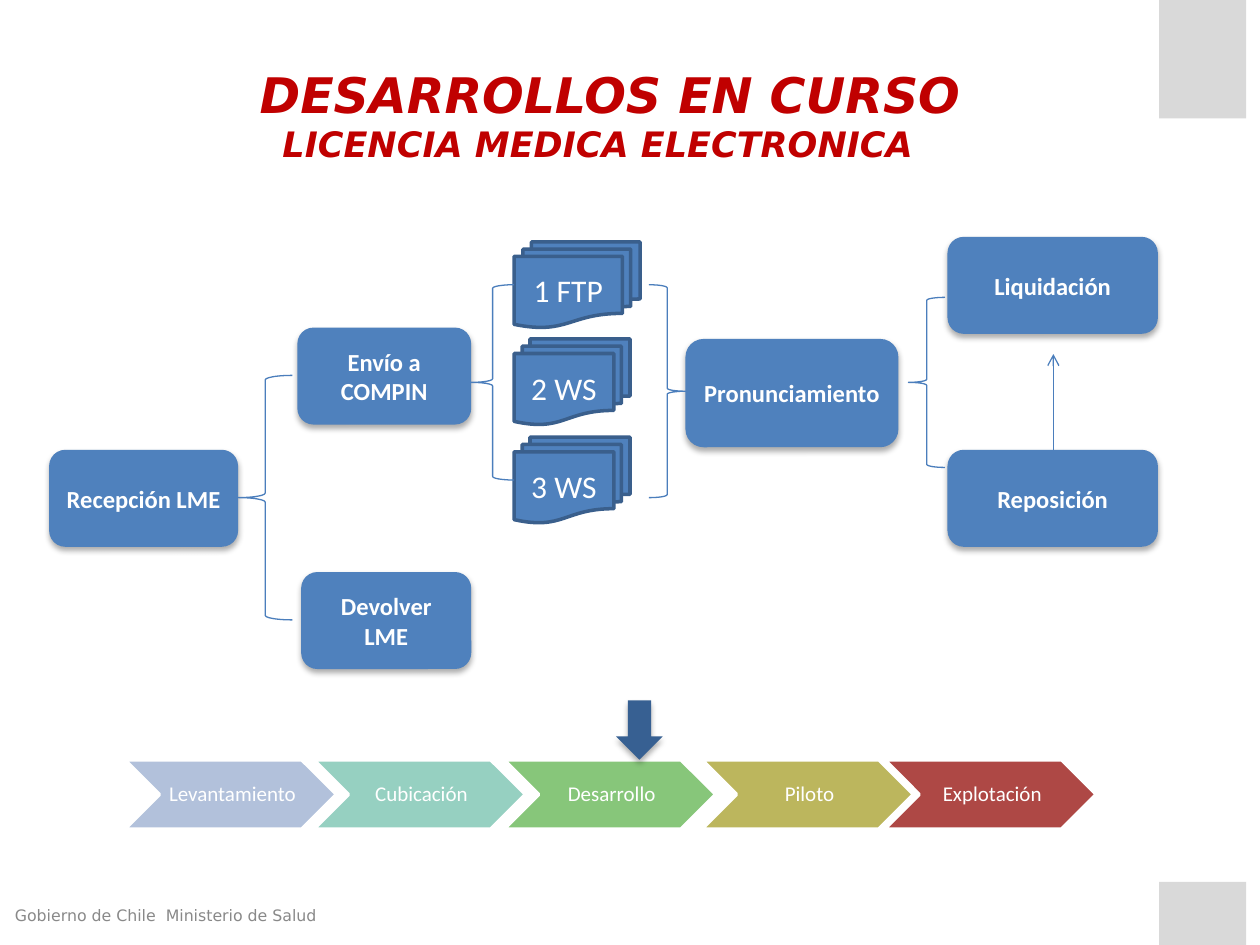
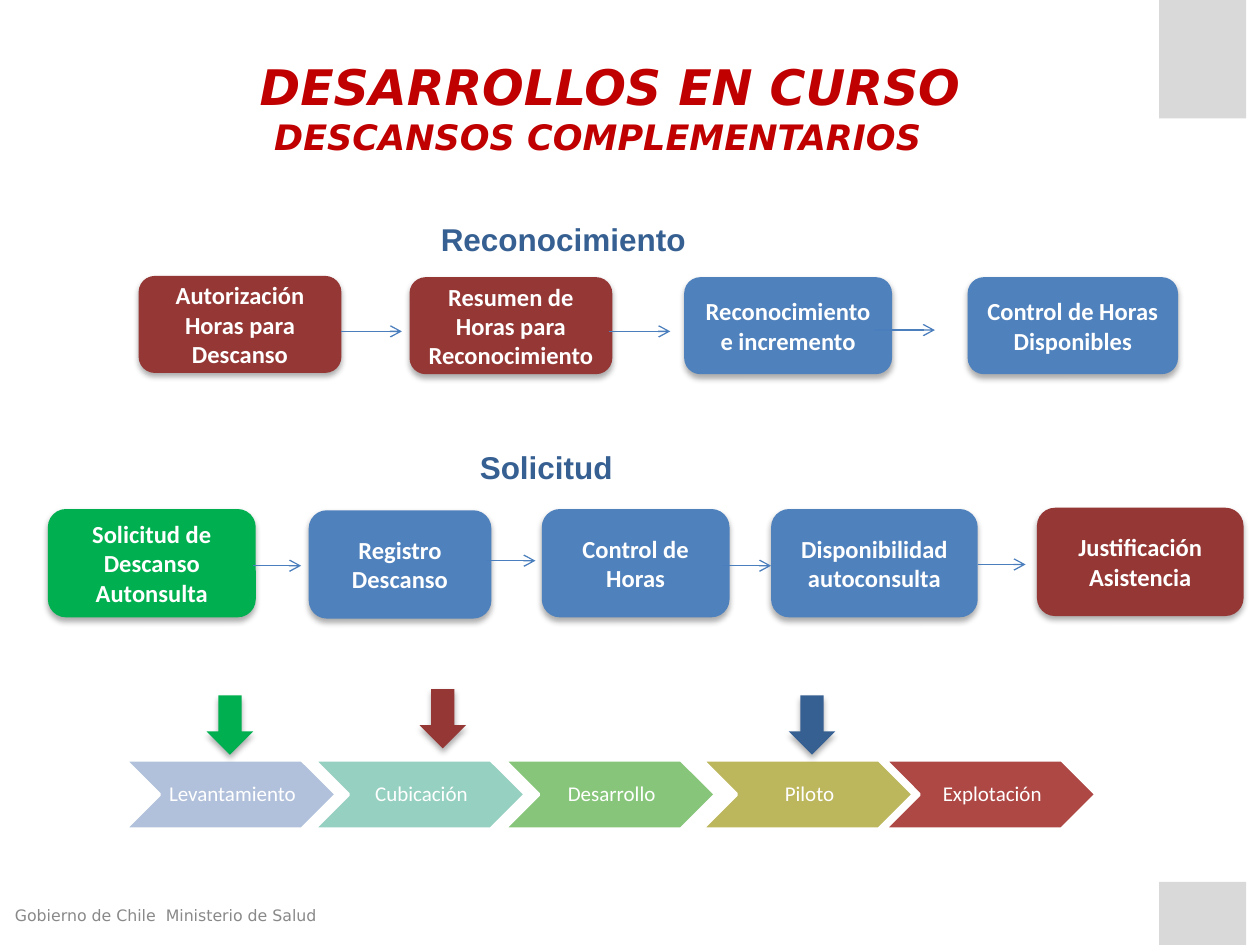
from dataclasses import dataclass

from pptx import Presentation
from pptx.dml.color import RGBColor
from pptx.enum.shapes import MSO_CONNECTOR, MSO_SHAPE
from pptx.enum.text import MSO_ANCHOR, PP_ALIGN
from pptx.oxml.ns import qn
from pptx.oxml.xmlchemy import OxmlElement
from pptx.shapes.autoshape import Shape
from pptx.slide import Slide
from pptx.text.text import TextFrame
from pptx.util import Emu, Pt

RECTANGLE = MSO_SHAPE.RECTANGLE
ROUNDED = MSO_SHAPE.ROUNDED_RECTANGLE
CHEVRON = MSO_SHAPE.CHEVRON
DOWN_ARROW = MSO_SHAPE.DOWN_ARROW
DOCUMENTS = MSO_SHAPE.FLOWCHART_MULTIDOCUMENT
LEFT_BRACE = MSO_SHAPE.LEFT_BRACE
RIGHT_BRACE = MSO_SHAPE.RIGHT_BRACE
STRAIGHT = MSO_CONNECTOR.STRAIGHT
LEFT = PP_ALIGN.LEFT
CENTER = PP_ALIGN.CENTER
TOP = MSO_ANCHOR.TOP
MIDDLE = MSO_ANCHOR.MIDDLE

EMU_PER_PX = 9144  # 100 px to the inch


@dataclass(frozen=True)
class Theme:
    title_red: str = "C00000"
    footer_gray: str = "898989"
    corner_gray: str = "D9D9D9"
    white: str = "FFFFFF"
    blue: str = "4F81BD"
    dark_blue: str = "376092"
    outline_blue: str = "3A5F8C"
    line_blue: str = "4B7EBC"
    maroon: str = "953735"
    green: str = "00B050"
    levantamiento: str = "B2C1DB"
    cubicacion: str = "96D0C1"
    desarrollo: str = "87C67A"
    piloto: str = "BCB65D"
    explotacion: str = "AE4845"
    shadow: str = "000000"
    title_font: str = "DejaVu Sans"
    body_font: str = "Calibri"
    heading_font: str = "Arial"
    title_size: int = 28
    subtitle_size: int = 20
    heading_size: int = 18
    document_size: int = 18
    box_size: int = 14
    phase_size: int = 12
    footer_size: int = 9
    thin: float = 0.75
    thick: float = 2


THEME = Theme()


@dataclass(frozen=True)
class Area:
    left: int
    top: int
    width: int
    height: int

    def emu(self) -> tuple[Emu, ...]:
        return tuple(px(n) for n in (self.left, self.top, self.width, self.height))


@dataclass(frozen=True)
class TextStyle:
    font: str
    size: int
    color: str
    bold: bool = False
    italic: bool = False


TITLE = TextStyle(THEME.title_font, THEME.title_size, THEME.title_red, True, True)
SUBTITLE = TextStyle(THEME.title_font, THEME.subtitle_size, THEME.title_red, True, True)
HEADING = TextStyle(THEME.heading_font, THEME.heading_size, THEME.dark_blue, True)
FOOTER = TextStyle(THEME.title_font, THEME.footer_size, THEME.footer_gray)
BOX_TEXT = TextStyle(THEME.body_font, THEME.box_size, THEME.white, True)
DOCUMENT_TEXT = TextStyle(THEME.body_font, THEME.document_size, THEME.white)
PHASE_TEXT = TextStyle(THEME.body_font, THEME.phase_size, THEME.white)


@dataclass(frozen=True)
class Step:
    text: str
    area: Area
    fill: str = THEME.blue


@dataclass(frozen=True)
class Arrow:
    start: tuple[int, int]
    end: tuple[int, int]


@dataclass(frozen=True)
class Phase:
    text: str
    left: int
    fill: str


CORNER_BARS = (Area(920, 0, 69, 94), Area(920, 700, 69, 50))

PHASES = (
    Phase("Levantamiento", 99, THEME.levantamiento),
    Phase("Cubicación", 249, THEME.cubicacion),
    Phase("Desarrollo", 400, THEME.desarrollo),
    Phase("Piloto", 557, THEME.piloto),
    Phase("Explotación", 702, THEME.explotacion),
)

LICENSE_STEPS = (
    Step("Recepción LME", Area(39, 357, 150, 77)),
    Step("Envío a COMPIN", Area(236, 260, 138, 77)),
    Step("Pronunciamiento", Area(544, 269, 169, 86)),
    Step("Liquidación", Area(752, 188, 167, 77)),
    Step("Devolver LME", Area(239, 454, 135, 77)),
    Step("Reposición", Area(752, 357, 167, 77)),
)
DOCUMENT_STACKS = (
    Step("1 FTP", Area(408, 192, 100, 68)),
    Step("2 WS", Area(408, 269, 92, 68)),
    Step("3 WS", Area(408, 347, 92, 68)),
)
BRACES = (
    (LEFT_BRACE, Area(189, 298, 43, 194)),
    (LEFT_BRACE, Area(374, 226, 34, 155)),
    (RIGHT_BRACE, Area(515, 226, 29, 169)),
    (LEFT_BRACE, Area(721, 236, 29, 135)),
)

REST_STEPS = (
    Step("Autorización Horas para Descanso", Area(110, 219, 161, 77), THEME.maroon),
    Step("Resumen de Horas para Reconocimiento", Area(325, 220, 161, 77), THEME.maroon),
    Step("Reconocimiento e incremento", Area(543, 220, 165, 77)),
    Step("Control de Horas Disponibles", Area(768, 220, 167, 77)),
    Step("Solicitud de Descanso Autonsulta", Area(38, 404, 165, 86), THEME.green),
    Step("Registro Descanso", Area(245, 405, 145, 86)),
    Step("Control de Horas", Area(430, 404, 149, 86)),
    Step("Disponibilidad autoconsulta", Area(612, 404, 164, 86)),
    Step("Justificación Asistencia", Area(823, 403, 164, 86), THEME.maroon),
)
REST_ARROWS = (
    Arrow((271, 263), (319, 263)),
    Arrow((483, 263), (532, 263)),
    Arrow((694, 262), (742, 262)),
    Arrow((201, 449), (239, 449)),
    Arrow((386, 445), (425, 445)),
    Arrow((574, 449), (612, 449)),
    Arrow((776, 448), (814, 448)),
)


def px(length: int) -> Emu:
    return Emu(length * EMU_PER_PX)


def rgb(color: str) -> RGBColor:
    return RGBColor.from_string(color)


def write(frame: TextFrame, text: str, style: TextStyle, align: PP_ALIGN = CENTER,
          anchor: MSO_ANCHOR = MIDDLE, first: bool = True):
    """Write one styled paragraph and return it."""
    frame.word_wrap = True
    frame.vertical_anchor = anchor
    para = frame.paragraphs[0] if first else frame.add_paragraph()
    para.alignment = align
    span = para.add_run()
    span.text = text
    font = span.font
    font.name, font.size = style.font, Pt(style.size)
    font.bold, font.italic = style.bold, style.italic
    font.color.rgb = rgb(style.color)
    return para


def add_shadow(shape: Shape) -> None:
    outer = OxmlElement("a:outerShdw")
    outer.set("blurRad", str(Pt(3.5)))
    outer.set("dist", str(Pt(2.2)))
    outer.set("dir", "5400000")
    outer.set("rotWithShape", "0")
    color = OxmlElement("a:srgbClr")
    color.set("val", THEME.shadow)
    alpha = OxmlElement("a:alpha")
    alpha.set("val", "32000")
    color.append(alpha)
    outer.append(color)
    shape.element.spPr.find(qn("a:effectLst")).append(outer)


def add_figure(page: Slide, kind: MSO_SHAPE, area: Area, fill: str | None = None,
               line: str | None = None, weight: float = THEME.thick,
               shadow: bool = False) -> Shape:
    shape = page.shapes.add_shape(kind, *area.emu())
    shape.shadow.inherit = False
    if fill:
        shape.fill.solid()
        shape.fill.fore_color.rgb = rgb(fill)
    else:
        shape.fill.background()
    if line:
        shape.line.color.rgb = rgb(line)
        shape.line.width = Pt(weight)
    else:
        shape.line.fill.background()
    if shadow:
        add_shadow(shape)
    return shape


def add_text(page: Slide, area: Area, text: str, style: TextStyle) -> None:
    box = page.shapes.add_textbox(*area.emu())
    write(box.text_frame, text, style, LEFT, TOP)


def add_title(page: Slide, top: int, subtitle: str) -> None:
    frame = page.shapes.add_textbox(*Area(28, top, 893, 88).emu()).text_frame
    title = write(frame, "DESARROLLOS EN CURSO", TITLE, anchor=TOP)
    title._p.get_or_add_pPr().set("marL", str(px(19)))
    write(frame, subtitle, SUBTITLE, anchor=TOP, first=False)


def add_step(page: Slide, step: Step) -> None:
    shape = add_figure(page, ROUNDED, step.area, step.fill, shadow=True)
    write(shape.text_frame, step.text, BOX_TEXT)


def add_documents(page: Slide, stack: Step) -> None:
    shape = add_figure(page, DOCUMENTS, stack.area, stack.fill, THEME.outline_blue)
    write(shape.text_frame, stack.text, DOCUMENT_TEXT)


def add_arrow(page: Slide, arrow: Arrow) -> None:
    ends = (px(n) for n in arrow.start + arrow.end)
    connector = page.shapes.add_connector(STRAIGHT, *ends)
    connector.line.color.rgb = rgb(THEME.line_blue)
    connector.line.width = Pt(THEME.thin)
    head = OxmlElement("a:tailEnd")
    head.set("type", "arrow")
    properties = connector.element.spPr
    properties.find(qn("a:ln")).append(head)
    properties.append(OxmlElement("a:effectLst"))


def add_marker(page: Slide, left: int, top: int, fill: str) -> None:
    """Point a block arrow down at one of the phases."""
    add_figure(page, DOWN_ARROW, Area(left, top, 37, 47), fill, shadow=True)


def add_phases(page: Slide) -> None:
    for phase in PHASES:
        shape = add_figure(page, CHEVRON, Area(phase.left, 603, 168, 55),
                           phase.fill, THEME.white)
        frame = shape.text_frame
        frame.margin_left = px(5)
        frame.margin_top = frame.margin_right = frame.margin_bottom = px(2)
        write(frame, phase.text, PHASE_TEXT).line_spacing = 0.9


def add_page(deck: Presentation, subtitle: str, title_top: int) -> Slide:
    """Add a page with corner bars, footer, title and the row of phases."""
    page = deck.slides.add_slide(deck.slide_layouts[6])
    for bar in CORNER_BARS:
        add_figure(page, RECTANGLE, bar, THEME.corner_gray)
    add_text(page, Area(2, 714, 317, 27), "Gobierno de Chile  Ministerio de Salud", FOOTER)
    add_title(page, title_top, subtitle)
    add_phases(page)
    return page


def build_license_page(deck: Presentation) -> None:
    page = add_page(deck, "LICENCIA MEDICA ELECTRONICA", 46)
    add_marker(page, 489, 556, THEME.dark_blue)
    for step in LICENSE_STEPS:
        add_step(page, step)
    for stack in DOCUMENT_STACKS:
        add_documents(page, stack)
    for kind, area in BRACES:
        add_figure(page, kind, area, line=THEME.line_blue, weight=THEME.thin)
    add_arrow(page, Arrow((836, 357), (836, 281)))


def build_rest_page(deck: Presentation) -> None:
    page = add_page(deck, "DESCANSOS COMPLEMENTARIOS", 40)
    add_text(page, Area(340, 170, 354, 40), "Reconocimiento", HEADING)
    add_text(page, Area(371, 351, 354, 40), "Solicitud", HEADING)
    for step in REST_STEPS:
        add_step(page, step)
    for arrow in REST_ARROWS:
        add_arrow(page, arrow)
    add_marker(page, 164, 552, THEME.green)
    add_marker(page, 333, 547, THEME.maroon)
    add_marker(page, 626, 552, THEME.dark_blue)


def main() -> None:
    deck = Presentation()
    deck.slide_width, deck.slide_height = px(1000), px(750)
    build_license_page(deck)
    build_rest_page(deck)
    deck.save("out.pptx")


if __name__ == "__main__":
    main()
